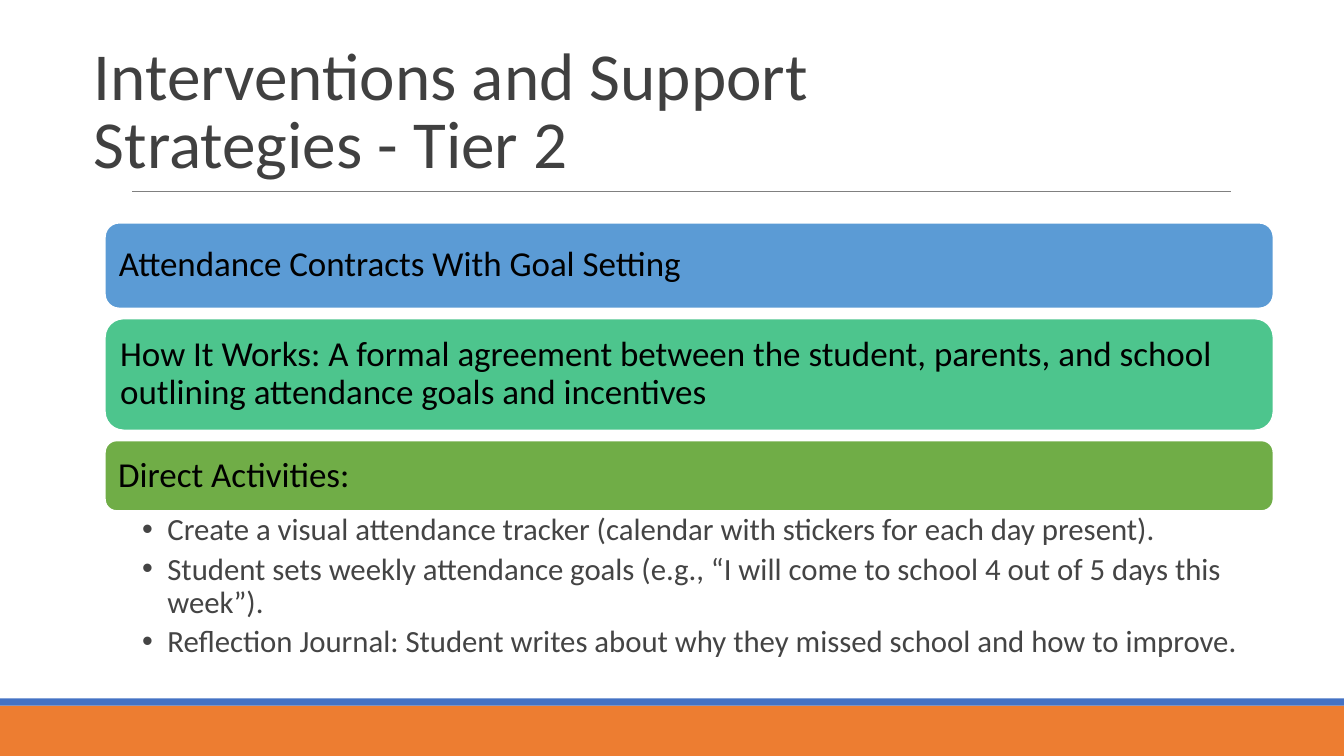
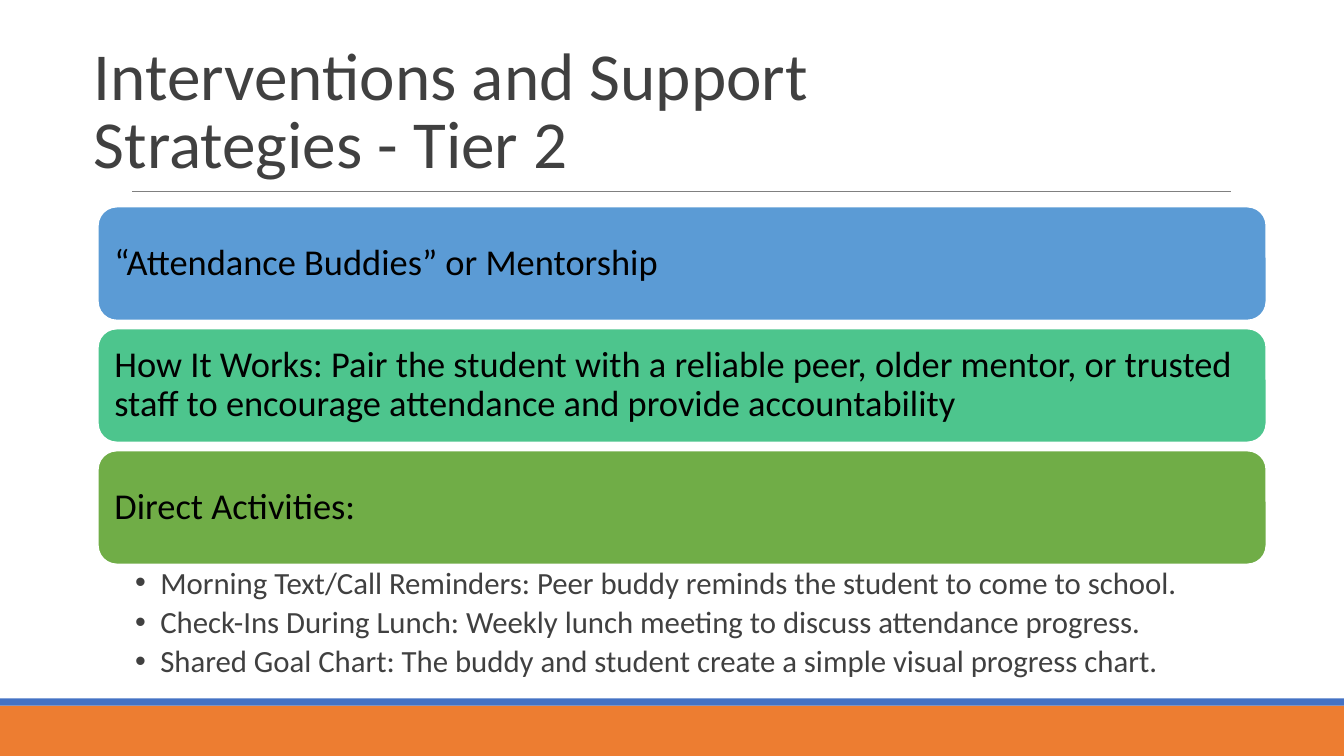
from lxml.etree import SubElement
from pptx import Presentation
from pptx.dml.color import RGBColor
from pptx.enum.shapes import MSO_CONNECTOR, MSO_SHAPE
from pptx.enum.text import MSO_ANCHOR, MSO_AUTO_SIZE, PP_ALIGN
from pptx.oxml.ns import qn
from pptx.util import Inches, Pt

FONT = "Calibri"
TITLE = "Interventions and Support\vStrategies - Tier 2"
TITLE_COLOR = "404040"
RULE_COLOR = "808080"
CARD_COLORS = ["5B9BD5", "4DC58D", "70AD47"]
FOOTER_BANDS = [(7, 0.5, "ED7D31"), (6.93, 0.07, "4472C4")]  # top, height, fill
CARD_WIDTH = 11.59

SLIDES = [
    {
        "left": 1.04, "top": 2.21, "gap": 0.1, "inset": 0.1, "size": 25,
        "cards": [
            ("Attendance Contracts With Goal Setting", 0.85),
            ("How It Works: A formal agreement between the student, parents, and school "
             "outlining attendance goals and incentives", 1.11),
            ("Direct Activities:", 0.7),
        ],
        "activities": [
            "Create a visual attendance tracker (calendar with stickers for each day present).",
            "Student sets weekly attendance goals (e.g., “I will come to school 4 out of 5 days "
            "this week”).",
            "Reflection Journal: Student writes about why they missed school and how to improve.",
        ],
        "activity_height": 1.56, "activity_color": "444444",
    },
    {
        "left": 0.97, "top": 2.05, "gap": 0.08, "inset": 0.11, "size": 26,
        "cards": [
            ("“Attendance Buddies” or Mentorship", 1.13),
            ("How It Works: Pair the student with a reliable peer, older mentor, or trusted "
             "staff to encourage attendance and provide accountability", 1.13),
            ("Direct Activities:", 1.13),
        ],
        "activities": [
            "Morning Text/Call Reminders: Peer buddy reminds the student to come to school.",
            "Check-Ins During Lunch: Weekly lunch meeting to discuss attendance progress.",
            "Shared Goal Chart: The buddy and student create a simple visual progress chart.",
        ],
        "activity_height": 1.24, "activity_color": "404040",
    },
]


def rgb(value):
    return RGBColor.from_string(value)


def box(left, top, width, height):
    return [Inches(value) for value in (left, top, width, height)]


def set_attributes(target, **values):
    for name, value in values.items():
        setattr(target, name, value)


def format_frame(frame, anchor, insets):
    """Set wrapping, anchor and the left, top, right and bottom insets."""
    left, top, right, bottom = [Inches(inset) for inset in insets]
    set_attributes(frame, word_wrap=True, auto_size=MSO_AUTO_SIZE.NONE,
                   vertical_anchor=anchor, margin_left=left, margin_top=top,
                   margin_right=right, margin_bottom=bottom)


def format_paragraph(paragraph, size, color, line_spacing=0.9, space_after=0):
    set_attributes(paragraph, alignment=PP_ALIGN.LEFT, line_spacing=line_spacing,
                   space_before=Pt(0), space_after=Pt(space_after))
    set_attributes(paragraph.font, name=FONT, size=Pt(size))
    paragraph.font.color.rgb = rgb(color)


def add_filled_shape(slide, kind, bounds, fill):
    shape = slide.shapes.add_shape(kind, *bounds)
    shape.shadow.inherit = False
    shape.fill.solid()
    shape.fill.fore_color.rgb = rgb(fill)
    shape.line.fill.background()
    return shape


def add_frame(slide):
    """Add the footer bands, the rule and the title that every slide shares."""
    for top, height, fill in FOOTER_BANDS:
        add_filled_shape(slide, MSO_SHAPE.RECTANGLE, box(0, top, 13.33, height), fill)
    rule = slide.shapes.add_connector(MSO_CONNECTOR.STRAIGHT, *box(1.31, 1.9, 12.21, 1.9))
    rule.line.color.rgb = rgb(RULE_COLOR)
    rule.line.width = Pt(0.5)
    SubElement(rule.element.spPr, qn("a:effectLst"))

    title = slide.shapes.title
    left, top, width, height = box(0.83, 0.27, 10.45, 1.72)
    set_attributes(title, left=left, top=top, width=width, height=height)
    title.text_frame.text = TITLE
    format_frame(title.text_frame, MSO_ANCHOR.MIDDLE, (0.1, 0.05, 0.1, 0.05))
    format_paragraph(title.text_frame.paragraphs[0], 48, TITLE_COLOR, line_spacing=0.85)


def add_card(slide, bounds, fill, text, size, inset):
    card = add_filled_shape(slide, MSO_SHAPE.ROUNDED_RECTANGLE, bounds, fill)
    card.line.color.rgb = rgb("FFFFFF")
    card.line.width = Pt(1.25)
    card.text_frame.text = text
    format_frame(card.text_frame, MSO_ANCHOR.MIDDLE, [inset] * 4)
    format_paragraph(card.text_frame.paragraphs[0], size, "000000")


def add_activities(slide, bounds, activities, color):
    frame = slide.shapes.add_textbox(*bounds).text_frame
    format_frame(frame, MSO_ANCHOR.TOP, (0.37, 0.03, 0.17, 0.03))
    frame.text = "\n".join(activities)
    for paragraph in frame.paragraphs:
        properties = paragraph._p.get_or_add_pPr()
        properties.set("marL", str(Inches(0.25)))
        properties.set("indent", str(Inches(-0.25)))
        SubElement(properties, qn("a:buFont"), typeface="Arial")
        SubElement(properties, qn("a:buChar"), char="•")
        format_paragraph(paragraph, 22, color, space_after=4.4)


def build_slide(presentation, content):
    slide = presentation.slides.add_slide(presentation.slide_layouts[5])
    add_frame(slide)
    left, top = content["left"], content["top"]
    for (text, height), fill in zip(content["cards"], CARD_COLORS):
        add_card(slide, box(left, top, CARD_WIDTH, height), fill, text,
                 content["size"], content["inset"])
        bottom = top + height
        top = bottom + content["gap"]
    add_activities(slide, box(left, bottom, CARD_WIDTH, content["activity_height"]),
                   content["activities"], content["activity_color"])


def main():
    presentation = Presentation()
    presentation.slide_width = Inches(13.33)
    presentation.slide_height = Inches(7.5)
    for content in SLIDES:
        build_slide(presentation, content)
    presentation.save("out.pptx")


if __name__ == "__main__":
    main()
